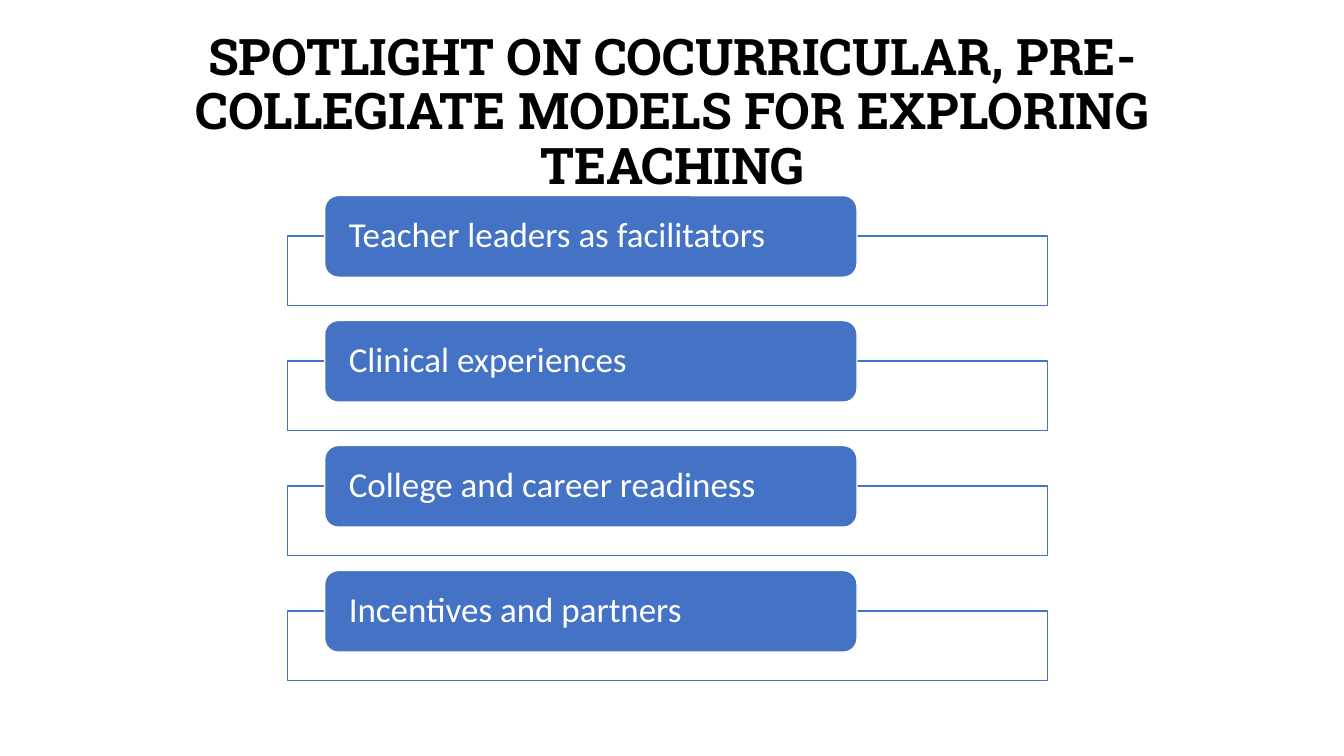
from lxml import etree
from pptx import Presentation
from pptx.dml.color import RGBColor
from pptx.enum.shapes import MSO_SHAPE
from pptx.enum.text import MSO_ANCHOR, MSO_AUTO_SIZE, PP_ALIGN
from pptx.oxml.ns import qn
from pptx.util import Inches, Pt

RECTANGLE = MSO_SHAPE.RECTANGLE
ROUNDED = MSO_SHAPE.ROUNDED_RECTANGLE
MIDDLE = MSO_ANCHOR.MIDDLE
NO_AUTOFIT = MSO_AUTO_SIZE.NONE
LEFT, CENTER = PP_ALIGN.LEFT, PP_ALIGN.CENTER

BLUE, WHITE, BLACK = "4472C4", "FFFFFF", "000000"
TITLE = "SPOTLIGHT ON COCURRICULAR, PRE-COLLEGIATE MODELS FOR EXPLORING TEACHING"
TOPICS = [
    "Teacher leaders as facilitators",
    "Clinical experiences",
    "College and career readiness",
    "Incentives and partners",
]
FIRST_TOP, TOPIC_STEP, FRAME_DROP = 1.94, 1.24, 0.4


def colour(value):
    return RGBColor.from_string(value)


def write_text(frame, text, font, size, ink, align, bold=False):
    frame.text = text
    frame.word_wrap = True
    frame.auto_size = NO_AUTOFIT
    frame.vertical_anchor = MIDDLE
    paragraph = frame.paragraphs[0]
    paragraph.alignment = align
    paragraph.line_spacing = 0.9
    run_font = paragraph.runs[0].font
    run_font.name = font
    run_font.size = Pt(size)
    run_font.bold = bold
    run_font.color.rgb = colour(ink)


def add_title(slide):
    title = slide.shapes.title
    title.left, title.top = Inches(0.92), Inches(0.4)
    title.width, title.height = Inches(11.5), Inches(1.45)
    write_text(title.text_frame, TITLE, "Roboto Slab", 36, BLACK, CENTER, bold=True)


def add_box(slide, preset, left, top, width, height, fill, line):
    box = slide.shapes.add_shape(
        preset, Inches(left), Inches(top), Inches(width), Inches(height)
    )
    box.shadow.inherit = False
    box.fill.solid()
    box.fill.fore_color.rgb = colour(fill)
    box.line.color.rgb = colour(line)
    box.line.width = Pt(1)
    return box


def set_opacity(box, percent):
    fill_colour = box.fill._xPr.find(qn("a:solidFill"))[0]
    etree.SubElement(fill_colour, qn("a:alpha"), val=str(percent * 1000))


def add_topic(slide, text, top):
    frame = add_box(slide, RECTANGLE, 2.85, top + FRAME_DROP, 7.54, 0.69, WHITE, BLUE)
    set_opacity(frame, 90)
    label = add_box(slide, ROUNDED, 3.22, top, 5.28, 0.81, BLUE, WHITE)
    label_text = label.text_frame
    label_text.margin_left = label_text.margin_right = Inches(0.2)
    label_text.margin_top = label_text.margin_bottom = 0
    write_text(label_text, text, "Calibri", 25, WHITE, LEFT)


def main():
    deck = Presentation()
    deck.slide_width, deck.slide_height = Inches(13.33), Inches(7.5)
    slide = deck.slides.add_slide(deck.slide_layouts[5])
    add_title(slide)
    for index, topic in enumerate(TOPICS):
        add_topic(slide, topic, FIRST_TOP + index * TOPIC_STEP)
    deck.save("out.pptx")


if __name__ == "__main__":
    main()
